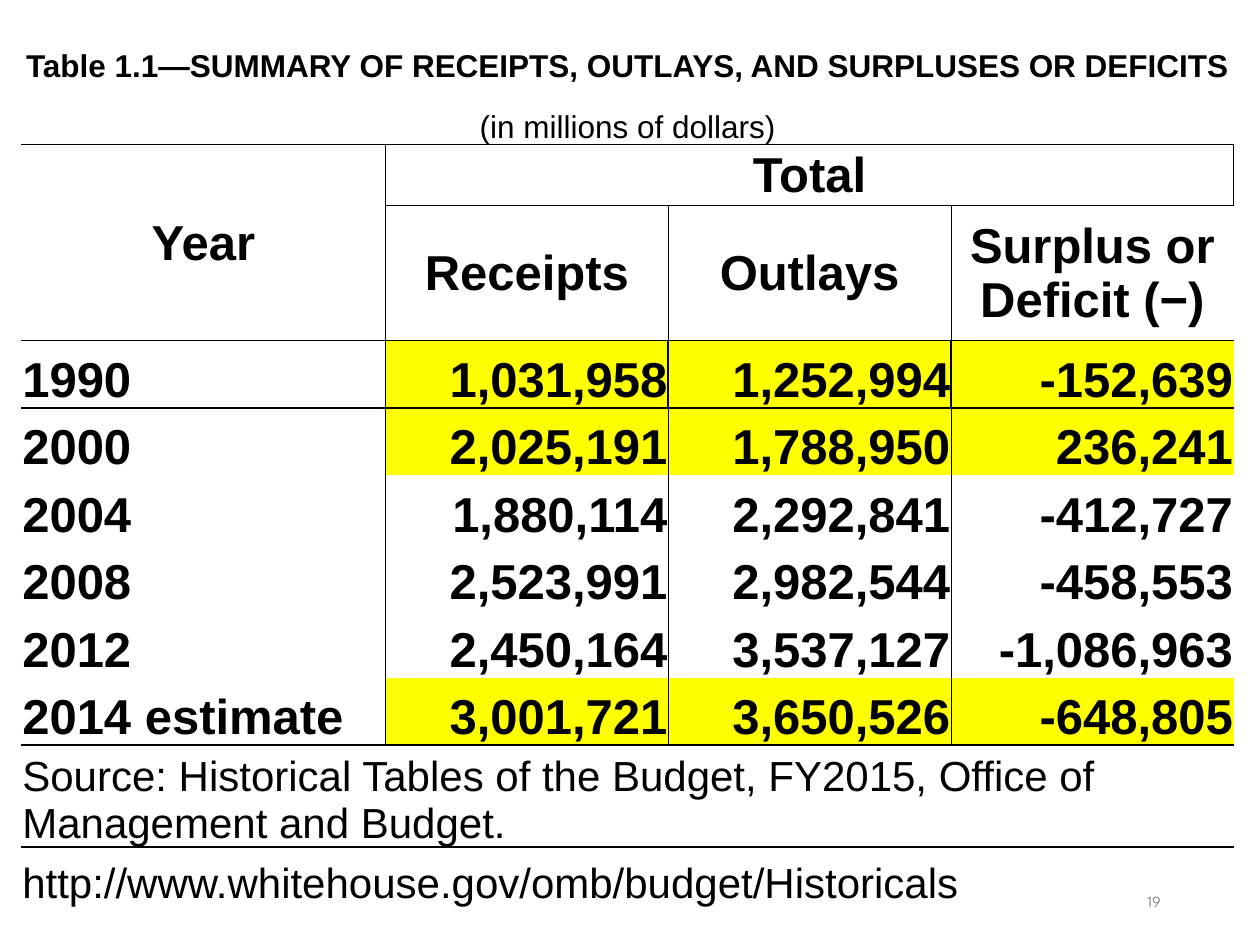
from lxml import etree
from pptx import Presentation
from pptx import util as u
from pptx.dml.color import RGBColor
from pptx.enum import text
from pptx.oxml import ns

COLORS = {"ink": "000000", "highlight": "FFFF00", "number": "8C8C8C"}
ALIGN, ANCHOR = text.PP_ALIGN, text.MSO_ANCHOR
NO_STYLE = "{2D5ABB26-0587-4C30-8999-92F81FD0307C}"


def write(frame, words, alignment, color, font_format):
    paragraph = frame.paragraphs[0]
    paragraph.alignment = alignment
    run = paragraph.add_run()
    run.text = words
    for name, value in font_format.items():
        setattr(run.font, name, value)
    run.font.color.rgb = RGBColor.from_string(COLORS[color])


def add_border(cell, side, width):
    properties = cell._tc.get_or_add_tcPr()
    line = etree.SubElement(properties, ns.qn(f"a:ln{side}"), w=str(u.Pt(width)))
    fill = etree.SubElement(line, ns.qn("a:solidFill"))
    etree.SubElement(fill, ns.qn("a:srgbClr"), val=COLORS["ink"])


presentation = Presentation()
presentation.slide_width = u.Cm(25.4)
presentation.slide_height = u.Cm(19.05)
slide = presentation.slides.add_slide(presentation.slide_layouts[6])

number_box = slide.shapes.add_textbox(u.Cm(17.93), u.Cm(17.65), u.Cm(5.72), u.Cm(1.02))
number_box.text_frame.word_wrap = True
number_box.text_frame.vertical_anchor = ANCHOR.MIDDLE
write(number_box.text_frame, "19", ALIGN.RIGHT, "number",
      {"size": u.Pt(9), "name": "League Spartan"})

rows = [
    ["Table 1.1—SUMMARY OF RECEIPTS, OUTLAYS, AND SURPLUSES OR DEFICITS"],
    ["(in millions of dollars)"],
    ["Year", "Total"],
    ["", "Receipts", "Outlays", "Surplus or Deficit (−)"],
    ["1990", "1,031,958", "1,252,994", "-152,639"],
    ["2000", "2,025,191", "1,788,950", "236,241"],
    ["2004", "1,880,114", "2,292,841", "-412,727"],
    ["2008", "2,523,991", "2,982,544", "-458,553"],
    ["2012", "2,450,164", "3,537,127", "-1,086,963"],
    ["2014 estimate", "3,001,721", "3,650,526", "-648,805"],
    ["Source: Historical Tables of the Budget, FY2015, Office of Management and Budget."],
    ["http://www.whitehouse.gov/omb/budget/Historicals"],
]
column_widths = [7.34] + [5.7] * 3
row_heights = [1.7, 1.22, 1.22, 2.72] + [1.36] * 6 + [1.7, 1.22]
highlighted_rows = {4, 5, 9}
data_rows = range(4, 10)
sizes = {0: 18, 1: 18, 10: 24, 11: 24}
plain_rows = {1, 10, 11}

frame = slide.shapes.add_table(len(rows), 4, u.Cm(0.43), 0,
                               u.Cm(sum(column_widths)), u.Cm(sum(row_heights)))
table = frame.table
table.first_row = table.horz_banding = False
table._tbl.tblPr.find(ns.qn("a:tableStyleId")).text = NO_STYLE
for column, width in zip(table.columns, column_widths):
    column.width = u.Cm(width)
for row, height in zip(table.rows, row_heights):
    row.height = u.Cm(height)

for row in (0, 1, 10, 11):
    table.cell(row, 0).merge(table.cell(row, 3))
table.cell(2, 0).merge(table.cell(3, 0))
table.cell(2, 1).merge(table.cell(2, 3))

every_column, total_columns = range(4), range(1, 4)
border_rules = [
    (range(2, 10), [0], "R", 0.5),
    (range(2, 10), [1], "L", 0.5),
    (range(3, 10), [1, 2], "R", 0.5),
    (range(3, 10), [2, 3], "L", 0.5),
    ([4], [0, 1, 2], "R", 1),
    ([4], total_columns, "L", 1),
    ([2], [1, 3], "R", 0.5),
    ([1], every_column, "B", 0.5),
    ([2], every_column, "T", 0.5),
    ([2], total_columns, "B", 0.5),
    ([3], total_columns, "T", 0.5),
    ([2], [0], "B", 1),
    ([3, 9], every_column, "B", 1),
    ([4, 10], every_column, "T", 1),
]
borders = {}
for rule_rows, rule_columns, side, width in border_rules:
    for row in rule_rows:
        for column in rule_columns:
            borders[row, column, side] = width

cell_format = {"margin_left": u.Cm(0.02), "margin_right": u.Cm(0.02),
               "margin_top": u.Cm(0.02), "margin_bottom": 0}
for row, values in enumerate(rows):
    for column in every_column:
        cell = table.cell(row, column)
        for name, value in cell_format.items():
            setattr(cell, name, value)
        cell.vertical_anchor = ANCHOR.MIDDLE if row in (2, 3) else ANCHOR.BOTTOM
        for side in "LRTB":
            if (row, column, side) in borders:
                add_border(cell, side, borders[row, column, side])
        if row in highlighted_rows and column > 0:
            cell.fill.solid()
            cell.fill.fore_color.rgb = RGBColor.from_string(COLORS["highlight"])
        else:
            cell.fill.background()
        if column < len(values) and values[column]:
            if row < 4:
                alignment = ALIGN.CENTER
            elif row in data_rows and column > 0:
                alignment = ALIGN.RIGHT
            else:
                alignment = ALIGN.LEFT
            write(cell.text_frame, values[column], alignment, "ink",
                  {"size": u.Pt(sizes.get(row, 28)), "name": "Arial",
                   "bold": row not in plain_rows})

presentation.save("out.pptx")
